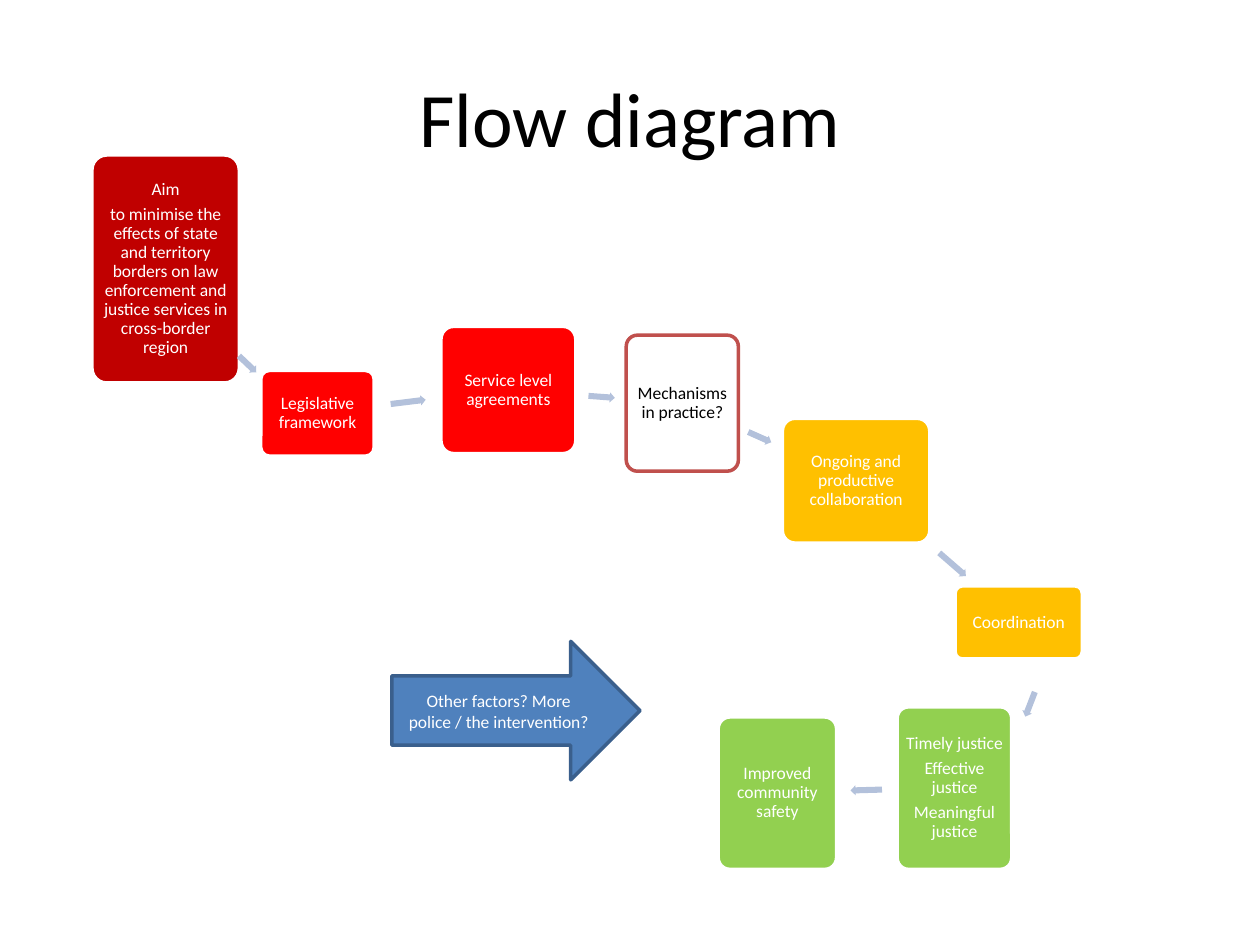
from pptx import Presentation
from pptx.dml.color import RGBColor
from pptx.enum import shapes, text
from pptx.util import Inches, Pt

FONT = "Calibri"
WHITE, BLACK = "FFFFFF", "000000"
ARROW_FILL = "B3C1DB"
ARROW_HEIGHT = 0.08

TITLE = ("Flow diagram", (0.5, 0.3, 9, 1.25))

# paragraphs, (left, top, width, height), fill, line, text colour
STEPS = [
    (["Aim", "to minimise the effects of state and territory borders on law "
      "enforcement and justice services in cross-border region"],
     (0.73, 1.23, 1.17, 1.81), "C00000", WHITE, WHITE),
    (["Legislative framework"], (2.07, 2.94, 0.9, 0.68), "FF0000", WHITE, WHITE),
    (["Service level agreements"], (3.5, 2.59, 1.07, 1.01), "FF0000", WHITE, WHITE),
    (["Mechanisms in practice?"], (4.97, 2.66, 0.89, 1.08), WHITE, "C0504D", BLACK),
    (["Ongoing and productive collaboration"],
     (6.21, 3.32, 1.17, 0.99), "FFC000", WHITE, WHITE),
    (["Coordination"], (7.58, 4.65, 1.01, 0.58), "FFC000", WHITE, WHITE),
    (["Timely justice", "Effective justice", "Meaningful justice"],
     (7.12, 5.61, 0.91, 1.29), "92D050", WHITE, WHITE),
    (["Improved community safety"], (5.7, 5.69, 0.94, 1.21), "92D050", WHITE, WHITE),
]

# left, top, width, rotation of the arrow after each step
ARROWS = [
    (1.87, 2.85, 0.19, 43.6),
    (3.1, 3.15, 0.28, 353),
    (4.67, 3.11, 0.21, 4.2),
    (5.93, 3.43, 0.2, 24.1),
    (7.42, 4.44, 0.28, 41),
    (8.07, 5.55, 0.21, 111.1),
    (6.75, 6.23, 0.25, 178.3),
]

QUESTION = ("Other factors? More police / the intervention?", (3.11, 5.09, 1.97, 1.1))

STEP_FRAME = {f"margin_{side}": Inches(0.04)
              for side in ("left", "top", "right", "bottom")}
STEP_PARA = {"line_spacing": 0.9, "space_after": Pt(3.5)}


def rgb(value):
    return RGBColor.from_string(value)


def set_all(target, values):
    for name, value in values.items():
        setattr(target, name, value)


def write(shape, lines, size, color, frame_format=None, para_format=None):
    """Fill a shape with centred paragraphs."""
    frame = shape.text_frame
    set_all(frame, {"word_wrap": True, "vertical_anchor": text.MSO_ANCHOR.MIDDLE,
                    **(frame_format or {})})
    for index, line in enumerate(lines):
        para = frame.add_paragraph() if index else frame.paragraphs[0]
        set_all(para, {"alignment": text.PP_ALIGN.CENTER, **(para_format or {})})
        span = para.add_run()
        span.text = line
        set_all(span.font, {"name": FONT, "size": Pt(size)})
        span.font.color.rgb = rgb(color)


def add_shape(page, kind, place, fill, line=None, adjustments=()):
    shape = page.shapes.add_shape(kind, *map(Inches, place))
    shape.shadow.inherit = False
    shape.fill.solid()
    shape.fill.fore_color.rgb = rgb(fill)
    if line:
        shape.line.color.rgb = rgb(line)
        shape.line.width = Pt(2)
    else:
        shape.line.fill.background()
    for index, value in enumerate(adjustments):
        shape.adjustments[index] = value
    return shape


def main():
    deck = Presentation()
    set_all(deck, {"slide_width": Inches(10), "slide_height": Inches(7.5)})
    page = deck.slides.add_slide(deck.slide_layouts[6])
    box_kind = shapes.MSO_SHAPE.ROUNDED_RECTANGLE
    arrow_kind = shapes.MSO_SHAPE.RIGHT_ARROW

    heading, place = TITLE
    write(page.shapes.add_textbox(*map(Inches, place)), [heading], 44, BLACK)

    for index, (lines, place, fill, line, color) in enumerate(STEPS):
        box = add_shape(page, box_kind, place, fill, line, [0.1])
        write(box, lines, 10, color, STEP_FRAME, STEP_PARA)
        if index < len(ARROWS):
            left, top, width, angle = ARROWS[index]
            arrow = add_shape(page, arrow_kind, (left, top, width, ARROW_HEIGHT),
                              ARROW_FILL, adjustments=[0.6, 0.5])
            arrow.rotation = angle

    question, place = QUESTION
    write(add_shape(page, arrow_kind, place, "4F81BD", "3A5F8C"), [question], 10, WHITE)

    deck.save("out.pptx")


if __name__ == "__main__":
    main()
